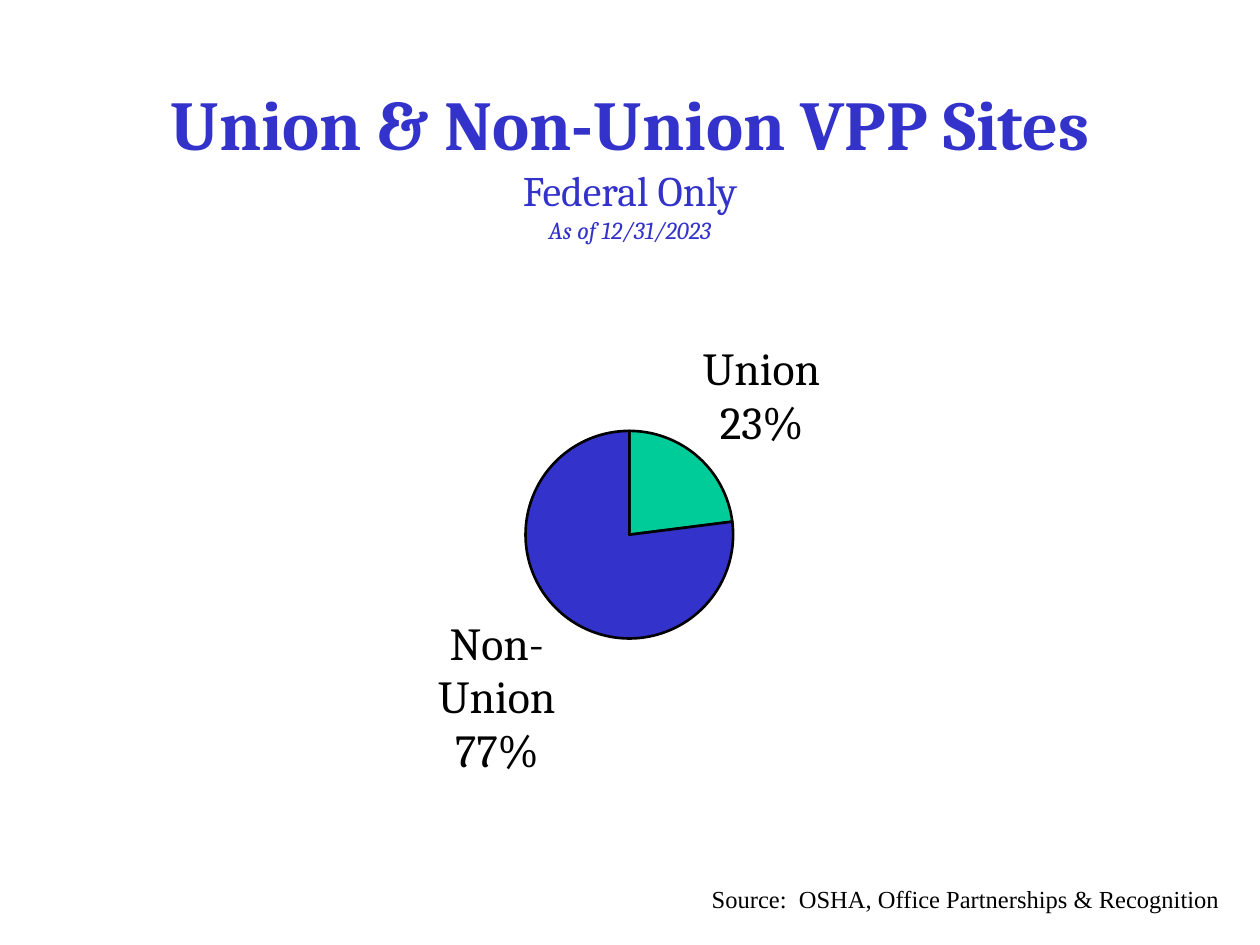
from lxml import etree
from pptx import Presentation
from pptx.chart.data import CategoryChartData
from pptx.dml.color import RGBColor
from pptx.enum.chart import XL_CHART_TYPE, XL_LABEL_POSITION
from pptx.enum.text import MSO_ANCHOR, MSO_AUTO_SIZE, PP_ALIGN
from pptx.oxml import parse_xml
from pptx.oxml.ns import qn
from pptx.util import Pt

PIE = XL_CHART_TYPE.PIE
OUTER = XL_LABEL_POSITION.OUTSIDE_END
MIDDLE = MSO_ANCHOR.MIDDLE
GROW = MSO_AUTO_SIZE.SHAPE_TO_FIT_TEXT
CENTER = PP_ALIGN.CENTER
LEFT = PP_ALIGN.LEFT

BLUE, GREEN, BLACK = "3333CC", "00CC99", "000000"
SERIF, TIMES = "Cambria", "Times New Roman"
NS = "http://schemas.openxmlformats.org/drawingml/2006/chart"


def color(code):
    return RGBColor.from_string(code)


def style(font, code, **values):
    for key, value in values.items():
        setattr(font, key, value)
    font.color.rgb = color(code)


def add_text(slide, box, align, frame_set):
    frame = slide.shapes.add_textbox(*map(Pt, box)).text_frame
    for key, value in frame_set.items():
        setattr(frame, key, value)
    para = frame.paragraphs[0]
    para.alignment = align
    return para


def add_run(para, text, code, **values):
    run = para.add_run()
    run.text = text
    style(run.font, code, **values)


def add_title(slide, box):
    para = add_text(slide, box, CENTER, {"word_wrap": True, "vertical_anchor": MIDDLE})
    lines = [
        ("Union & Non-Union VPP Sites", {"size": Pt(40), "bold": True}),
        ("Federal Only", {"size": Pt(24)}),
        ("As of 12/31/2023", {"size": Pt(14), "italic": True}),
    ]
    for index, (text, values) in enumerate(lines):
        if index:
            para.add_line_break()
        add_run(para, text, BLUE, name=SERIF, **values)


def set_plot(chart, x, y, w, h):
    area = chart.element.find(".//" + qn("c:plotArea"))
    for old in area.findall(qn("c:layout")):
        area.remove(old)
    parts = {"layoutTarget": "inner", "xMode": "edge", "yMode": "edge",
             "x": x, "y": y, "w": w, "h": h}
    rows = "".join(f'<c:{key} val="{value}"/>' for key, value in parts.items())
    area.insert(0, parse_xml(
        f'<c:layout xmlns:c="{NS}"><c:manualLayout>{rows}</c:manualLayout></c:layout>'))


def add_pie(slide, box):
    data = CategoryChartData(number_format="0")
    data.categories = ["Union", "Non-Union"]
    data.add_series("Series 1", [23, 77])
    chart = slide.shapes.add_chart(PIE, *map(Pt, box), data).chart
    chart.has_title = False
    chart.has_legend = False
    style(chart.font, BLACK, name=SERIF, size=Pt(26.2), bold=False)
    set_plot(chart, 0.31, 0.34, 0.38, 0.32)

    plot = chart.plots[0]
    plot.vary_by_categories = True
    series = plot.series[0]
    for index, code in enumerate([GREEN, BLUE]):
        form = series.points[index].format
        form.fill.solid()
        form.fill.fore_color.rgb = color(code)
        form.line.color.rgb = color(BLACK)
        form.line.width = Pt(1.5)

    labels = series.data_labels
    wanted = {"show_value": False, "show_category_name": True,
              "show_percentage": True, "number_format": "0%",
              "number_format_is_linked": False, "position": OUTER}
    for key, value in wanted.items():
        setattr(labels, key, value)
    style(labels.font, BLACK, name=SERIF, size=Pt(26.2), bold=False)
    for tail in chart.element.iter(qn("c:showBubbleSize")):
        mark = etree.Element(qn("c:separator"))
        mark.text = "\n"
        tail.addnext(mark)


def add_source(slide, box):
    para = add_text(slide, box, LEFT, {"word_wrap": False, "auto_size": GROW})
    add_run(para, "Source:  OSHA, Office Partnerships & Recognition", BLACK,
            name=TIMES, size=Pt(14))
    add_run(para, " ", BLACK, name=TIMES, size=Pt(24))


def main():
    deck = Presentation()
    deck.slide_width, deck.slide_height = Pt(720), Pt(540)
    slide = deck.slides.add_slide(deck.slide_layouts[6])
    add_title(slide, (54, 42, 612, 102))
    add_pie(slide, (143.3, 120.2, 432.7, 370.8))
    add_source(slide, (399.6, 491.8, 310.3, 36))
    deck.save("out.pptx")


if __name__ == "__main__":
    main()
